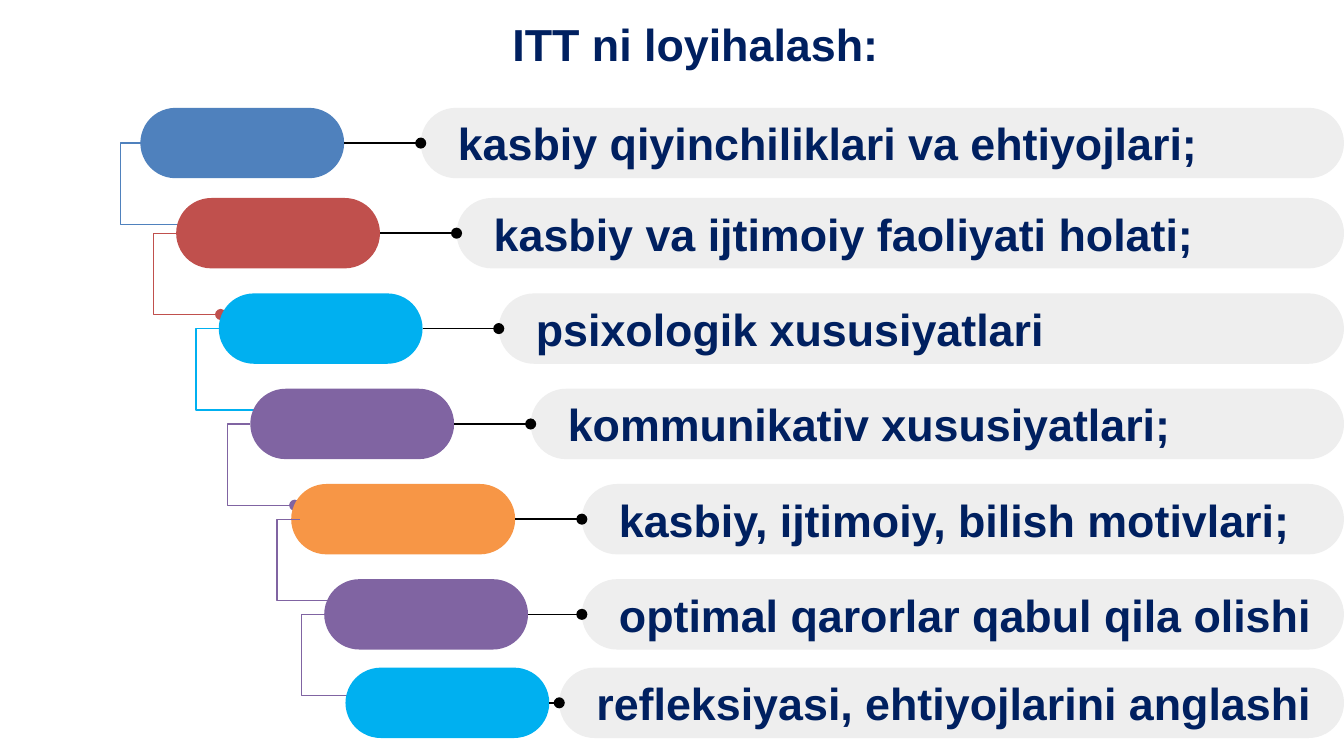
from dataclasses import dataclass

from lxml import etree
from pptx import Presentation
from pptx.dml.color import RGBColor
from pptx.enum.shapes import MSO_CONNECTOR, MSO_SHAPE
from pptx.enum.text import MSO_ANCHOR, MSO_AUTO_SIZE, PP_ALIGN
from pptx.oxml.ns import qn
from pptx.util import Pt

ROUNDED = MSO_SHAPE.ROUNDED_RECTANGLE
STRAIGHT = MSO_CONNECTOR.STRAIGHT
MIDDLE = MSO_ANCHOR.MIDDLE
LEFT, CENTER = PP_ALIGN.LEFT, PP_ALIGN.CENTER
NO_AUTOFIT = MSO_AUTO_SIZE.NONE

COLORS = {
    "navy": "002060", "gray": "EEEEEE", "black": "000000", "blue": "4F81BD",
    "red": "C0504D", "cyan": "00B0F0", "purple": "8064A2", "orange": "F79646",
}

SLIDE_WIDTH, SLIDE_HEIGHT = 720, 405
ROW_HEIGHT = 37.7
PILL_WIDTH = 109.2
BRACKET_INDENT, BRACKET_WIDTH, BRACKET_DROP = 12.2, 36, 43.5


@dataclass
class Row:
    text: str
    color: str
    top: float
    pill_left: float
    bar_left: float
    pill_width: float = PILL_WIDTH
    bracket_color: str = ""
    bracket_shift: float = 0  # bracket start, measured from the pill's left side
    bracket_in_front: bool = False


ROWS = [
    Row("kasbiy qiyinchiliklari va ehtiyojlari;", "blue", 57.8, 75.2, 225.4,
        bracket_shift=1.6),
    Row("kasbiy va ijtimoiy faoliyati holati;", "red", 106.1, 94.4, 244.6),
    Row("psixologik xususiyatlari", "cyan", 157.2, 117.2, 267.2),
    Row("kommunikativ xususiyatlari;", "purple", 208.3, 134.1, 284.3),
    Row("kasbiy, ijtimoiy, bilish motivlari;", "orange", 259.3, 156, 311.7,
        pill_width=120, bracket_color="purple", bracket_shift=4.6,
        bracket_in_front=True),
    Row("optimal qarorlar qabul qila olishi", "purple", 310.3, 173.7, 311.7),
    Row("refleksiyasi, ehtiyojlarini anglashi", "cyan", 357.7, 185.1, 299.6),
]


@dataclass
class Deck:
    slide: object
    font: str = "Arial"
    size: float = 24
    line_width: float = 0.75

    def color(self, name):
        return RGBColor.from_string(COLORS[name])

    def add_text(self, frame, text, align, left_inset=7.2):
        frame.word_wrap = True
        frame.auto_size = NO_AUTOFIT
        frame.vertical_anchor = MIDDLE
        frame.margin_left = Pt(left_inset)
        frame.margin_top = frame.margin_right = frame.margin_bottom = Pt(7.2)
        paragraph = frame.paragraphs[0]
        paragraph.alignment = align
        run = paragraph.add_run()
        run.text = text
        run.font.name = self.font
        run.font.size = Pt(self.size)
        run.font.bold = True
        run.font.color.rgb = self.color("navy")

    def title(self, text, left, top, width, height):
        title = self.slide.shapes.title
        title.left, title.top = Pt(left), Pt(top)
        title.width, title.height = Pt(width), Pt(height)
        self.add_text(title.text_frame, text, CENTER)

    def capsule(self, left, top, width, color, text=""):
        capsule = self.slide.shapes.add_shape(
            ROUNDED, Pt(left), Pt(top), Pt(width), Pt(ROW_HEIGHT))
        capsule.adjustments[0] = 0.5
        capsule.shadow.inherit = False
        capsule.fill.solid()
        capsule.fill.fore_color.rgb = self.color(color)
        capsule.line.fill.background()
        if text:
            self.add_text(capsule.text_frame, text, LEFT, 14.4)
        return capsule

    def dotted_end(self, line, color):
        """Style a line and put a round dot at its end."""
        line.line.color.rgb = self.color(color)
        line.line.width = Pt(self.line_width)
        outline = line._element.spPr.find(qn("a:ln"))
        etree.SubElement(outline, qn("a:tailEnd"), type="oval")

    def link(self, pill, bar):
        link = self.slide.shapes.add_connector(STRAIGHT, 0, 0, 0, 0)
        link.begin_connect(pill, 3)
        link.end_connect(bar, 1)
        self.dotted_end(link, "black")
        etree.SubElement(link._element.spPr, qn("a:effectLst"))

    def bracket(self, row):
        start, top = row.pill_left + row.bracket_shift, row.top + ROW_HEIGHT / 2
        left, bottom = start - BRACKET_INDENT, top + BRACKET_DROP
        builder = self.slide.shapes.build_freeform(Pt(start), Pt(top))
        corners = [(left, top), (left, bottom), (left + BRACKET_WIDTH, bottom)]
        builder.add_line_segments([(Pt(x), Pt(y)) for x, y in corners], close=False)
        bracket = builder.convert_to_shape()
        bracket.fill.background()
        self.dotted_end(bracket, row.bracket_color or row.color)
        bracket.shadow.inherit = False

    def row(self, row):
        pill = self.capsule(row.pill_left, row.top, row.pill_width, row.color)
        bar = self.capsule(row.bar_left, row.top, SLIDE_WIDTH - row.bar_left,
                           "gray", row.text)
        self.link(pill, bar)


def main():
    presentation = Presentation()
    presentation.slide_width = Pt(SLIDE_WIDTH)
    presentation.slide_height = Pt(SLIDE_HEIGHT)
    deck = Deck(presentation.slides.add_slide(presentation.slide_layouts[5]))

    # Heading
    deck.title("ITT ni loyihalash:", 56, 4.5, 633, 38)

    # Staircase: a bracket leads down to the next row
    *upper_rows, last_row = ROWS
    for row in upper_rows:
        if not row.bracket_in_front:
            deck.bracket(row)
        deck.row(row)

    # Brackets that lie over their pill, then the last row
    for row in upper_rows:
        if row.bracket_in_front:
            deck.bracket(row)
    deck.row(last_row)

    presentation.save("out.pptx")


if __name__ == "__main__":
    main()
